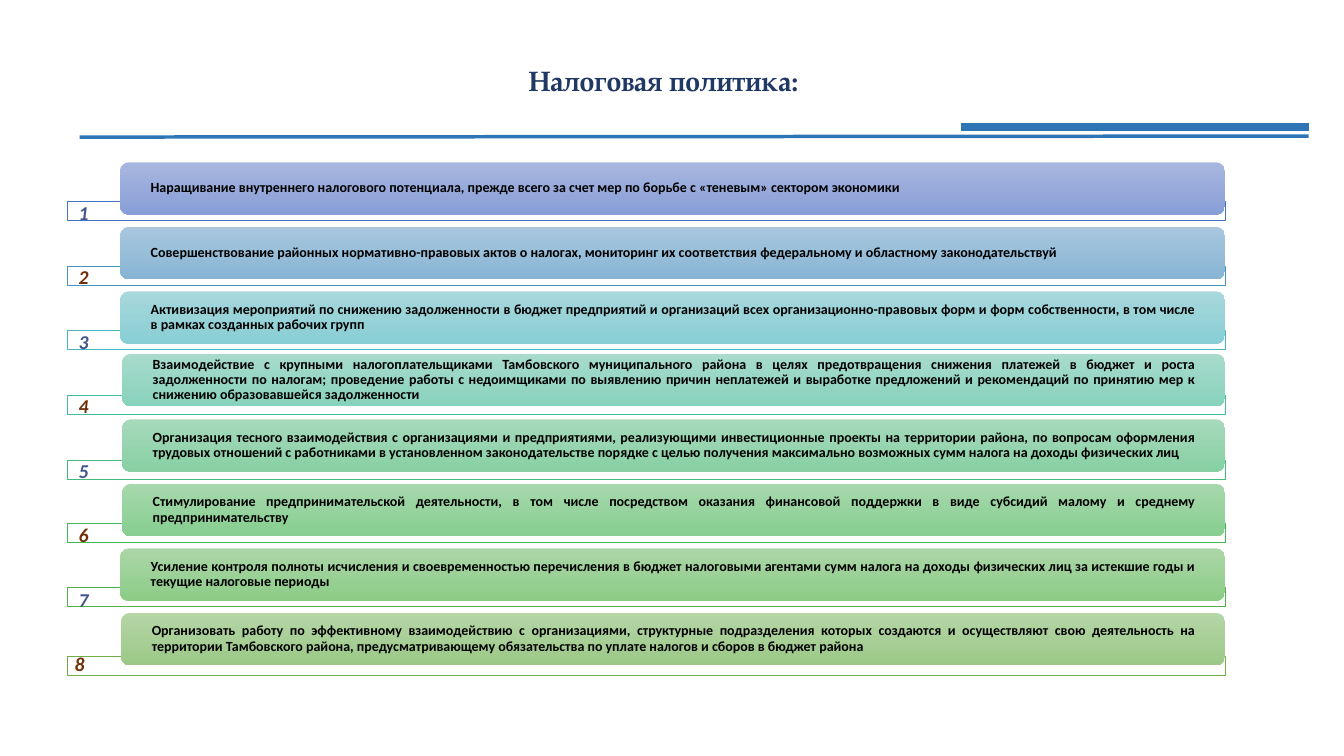
from lxml import etree
from pptx import Presentation
from pptx import util as u
from pptx.dml.color import RGBColor
from pptx.enum import shapes, text
from pptx.oxml.ns import qn

FRAME_LEFT, RIGHT = 0.67, 12.15
NUMBER_TOP, PITCH = 1.94, 0.64
BLUE, BROWN = "42568D", "723008"

# Frame colour, gradient top and bottom, card left and top, frame top, wording
MEASURES = [
    ("4472C4", "A8B7DF", "889ED7", 1.19, 1.61, 2.00,
     "Наращивание внутреннего налогового потенциала, прежде всего за счет мер "
     "по борьбе с «теневым» сектором экономики"),
    ("4496C1", "A8C7DE", "88B5D5", 1.19, 2.25, 2.64,
     "Совершенствование районных нормативно-правовых актов о налогах, мониторинг "
     "их соответствия федеральному и областному законодательствуй"),
    ("43B8BF", "A8D8DC", "88CED4", 1.19, 2.89, 3.28,
     "Активизация мероприятий по снижению задолженности в бюджет предприятий и "
     "организаций всех организационно-правовых форм и форм собственности, в том "
     "числе в рамках созданных рабочих групп"),
    ("43BCA0", "A8DBCC", "87D2BC", 1.21, 3.51, 3.92,
     "Взаимодействие с крупными налогоплательщиками Тамбовского муниципального "
     "района в целях предотвращения снижения платежей в бюджет и роста "
     "задолженности по налогам; проведение работы с недоимщиками по выявлению "
     "причин неплатежей и выработке предложений и рекомендаций по принятию мер к "
     "снижению образовавшейся задолженности"),
    ("44B97B", "A7D9BB", "87D0A4", 1.21, 4.16, 4.57,
     "Организация тесного взаимодействия с организациями и предприятиями, "
     "реализующими инвестиционные проекты на территории района, по вопросам "
     "оформления трудовых отношений с работниками в установленном "
     "законодательстве порядке с целью получения максимально возможных сумм "
     "налога на доходы физических лиц"),
    ("45B559", "A7D8AD", "87CE90", 1.21, 4.80, 5.19,
     "Стимулирование предпринимательской деятельности, в том числе посредством "
     "оказания финансовой поддержки в виде субсидий малому и среднему "
     "предпринимательству"),
    ("52B146", "ABD6A7", "8CCC87", 1.19, 5.44, 5.83,
     "Усиление контроля полноты исчисления и своевременностью перечисления в "
     "бюджет налоговыми агентами сумм налога на доходы физических лиц за "
     "истекшие годы и текущие налоговые периоды"),
    ("70AD47", "B5D5A7", "9CC987", 1.20, 6.08, 6.51,
     "Организовать работу по эффективному взаимодействию с организациями, "
     "структурные подразделения которых создаются и осуществляют свою "
     "деятельность на территории Тамбовского района, предусматривающему "
     "обязательства по уплате налогов и сборов в бюджет района"),
]


def colour(code):
    return RGBColor.from_string(code)


def inches(*lengths):
    return [u.Inches(length) for length in lengths]


class PolicySlide:
    title_font, body_font = "TeX Gyre Pagella", "Calibri"
    title_colour, rule_colour = "203864", "2E75B6"

    def __init__(self, slide):
        self.slide = slide

    def add_words(self, frame, wording, size, code, font=body_font,
                  align=text.PP_ALIGN.CENTER, italic=False):
        paragraph = frame.paragraphs[0]
        paragraph.alignment = align
        run = paragraph.add_run()
        run.text = wording
        run.font.name, run.font.size = font, u.Pt(size)
        run.font.bold, run.font.italic = True, italic
        run.font.color.rgb = colour(code)
        return paragraph

    def title(self, wording, *box):
        heading = self.slide.shapes.title
        heading.left, heading.top, heading.width, heading.height = inches(*box)
        heading.text_frame.vertical_anchor = text.MSO_ANCHOR.MIDDLE
        self.add_words(heading.text_frame, wording, 20, self.title_colour, self.title_font)

    def frame(self, line, *box):
        frame = self.slide.shapes.add_shape(shapes.MSO_SHAPE.RECTANGLE, *inches(*box))
        frame.shadow.inherit = False
        frame.fill.solid()
        frame.fill.fore_color.rgb = colour("FFFFFF")
        frame.line.color.rgb = colour(line)
        frame.line.width = u.Pt(0.5)

    def card(self, wording, shades, *box):
        card = self.slide.shapes.add_shape(shapes.MSO_SHAPE.ROUNDED_RECTANGLE, *inches(*box))
        card.shadow.inherit = False
        card.line.fill.background()
        card.fill.gradient()
        card.fill.gradient_angle = 270
        for stop, shade in zip(card.fill.gradient_stops, shades):
            stop.color.rgb = colour(shade)
        body = card.text_frame
        body.word_wrap = True
        body.vertical_anchor = text.MSO_ANCHOR.MIDDLE
        body.margin_left = body.margin_right = u.Inches(0.28)
        body.margin_top = body.margin_bottom = 0
        paragraph = self.add_words(body, wording, 10, "000000", align=text.PP_ALIGN.JUSTIFY)
        paragraph.line_spacing = 0.9
        paragraph.space_after = u.Pt(3.5)

    def number(self, value, code, *box):
        label = self.slide.shapes.add_textbox(*inches(*box)).text_frame
        label.word_wrap = True
        self.add_words(label, str(value), 14, code, italic=True)

    def rule(self, width, *ends):
        rule = self.slide.shapes.add_connector(shapes.MSO_CONNECTOR.STRAIGHT, *inches(*ends))
        rule.line.color.rgb = colour(self.rule_colour)
        rule.line.width = u.Pt(width)
        etree.SubElement(rule._element.spPr, qn("a:effectLst"))


def main():
    deck = Presentation()
    deck.slide_width, deck.slide_height = inches(13.33, 7.5)
    policy = PolicySlide(deck.slides.add_slide(deck.slide_layouts[5]))

    # Heading
    policy.title("Налоговая политика:", 0.58, 0.42, 12, 0.75)

    # Numbered measures
    for index, measure in enumerate(MEASURES):
        line, light, dark, left, top, frame_top, wording = measure
        policy.frame(line, FRAME_LEFT, frame_top, RIGHT - FRAME_LEFT, 0.19)
        policy.card(wording, (light, dark), left, top, RIGHT - left, 0.52)
        number_width = 0.42 if index == len(MEASURES) - 1 else 0.5
        policy.number(index + 1, BROWN if index % 2 else BLUE,
                      0.58, NUMBER_TOP + PITCH * index, number_width, 0.34)

    # Rules under the heading
    policy.rule(2.5, 0.79, 1.36, 12.98, 1.35)
    policy.rule(6, 9.53, 1.26, 12.98, 1.26)

    deck.save("out.pptx")


if __name__ == "__main__":
    main()
